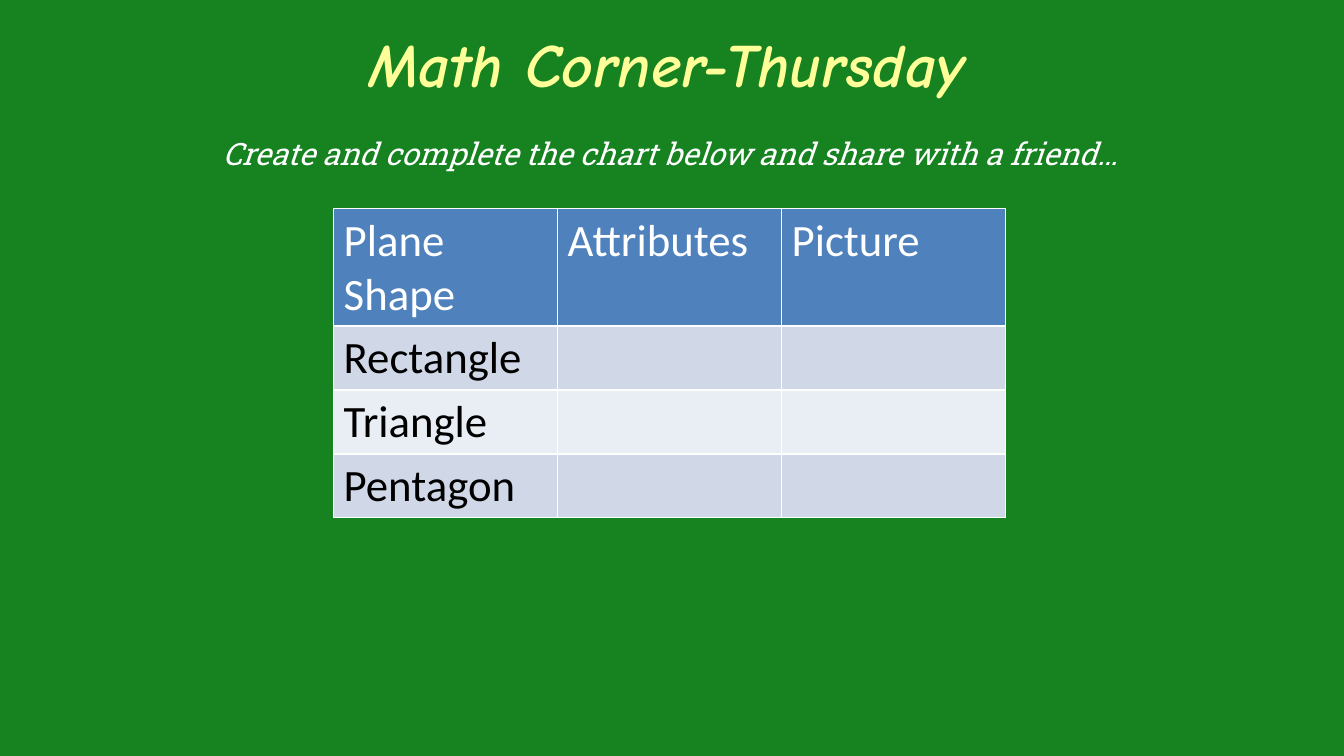
from dataclasses import dataclass

from lxml import etree
from pptx import Presentation
from pptx.dml.color import RGBColor
from pptx.enum.text import MSO_ANCHOR, PP_ALIGN
from pptx.oxml.ns import qn
from pptx.util import Pt

CENTER, LEFT = PP_ALIGN.CENTER, PP_ALIGN.LEFT
TOP, MIDDLE = MSO_ANCHOR.TOP, MSO_ANCHOR.MIDDLE

GREEN, YELLOW, WHITE, BLACK = "168220", "FFFF99", "FFFFFF", "000000"
HEADER_BLUE, BAND_DARK, BAND_LIGHT = "4F81BD", "D0D8E8", "E9EDF4"

COLUMN_WIDTH, HEADER_HEIGHT, ROW_HEIGHT = 160, 84, 45.7
TABLE_LEFT, TABLE_TOP = 238.3, 148.8
TABLE_ROWS = [
    ("Plane Shape", "Attributes", "Picture"),
    ("Rectangle", "", ""),
    ("Triangle", "", ""),
    ("Pentagon", "", ""),
]


@dataclass
class Heading:
    text: str
    left: float
    top: float
    width: float
    height: float
    font: str
    size: float
    color: str
    bold: bool
    anchor: MSO_ANCHOR


HEADINGS = [
    Heading("Math Corner-Thursday", 152.6, 0, 648, 90,
            "Comic Neue", 44, YELLOW, True, MIDDLE),
    Heading("Create and complete the chart below and share with a friend…",
            133.9, 92.9, 689.8, 55.4, "Roboto Slab", 22, WHITE, False, TOP),
]


def rgb(value: str) -> RGBColor:
    return RGBColor.from_string(value)


def write_text(text_frame, text: str, *, font: str, size: float, color: str,
               bold: bool = False, italic: bool = False,
               align: PP_ALIGN = LEFT) -> None:
    text_frame.word_wrap = True
    paragraph = text_frame.paragraphs[0]
    paragraph.alignment = align
    # The paragraph font also sizes cells that hold no text
    targets = [paragraph.font]
    if text:
        run = paragraph.add_run()
        run.text = text
        targets = [run.font]
    for target in targets:
        target.name, target.size = font, Pt(size)
        target.bold, target.italic = bold, italic
        target.color.rgb = rgb(color)


def add_heading(slide, heading: Heading) -> None:
    shape = slide.shapes.add_textbox(Pt(heading.left), Pt(heading.top),
                                     Pt(heading.width), Pt(heading.height))
    shape.text_frame.vertical_anchor = heading.anchor
    write_text(shape.text_frame, heading.text, font=heading.font,
               size=heading.size, color=heading.color, bold=heading.bold,
               italic=True, align=CENTER)


def set_borders(cell, color: str, width: float) -> None:
    properties = cell._tc.get_or_add_tcPr()
    for index, side in enumerate(("lnL", "lnR", "lnT", "lnB")):
        line = etree.Element(qn(f"a:{side}"), w=str(Pt(width)))
        fill = etree.SubElement(line, qn("a:solidFill"))
        etree.SubElement(fill, qn("a:srgbClr"), val=color)
        properties.insert(index, line)


def add_shape_table(slide) -> None:
    row_count, column_count = len(TABLE_ROWS), len(TABLE_ROWS[0])
    height = HEADER_HEIGHT + ROW_HEIGHT * (row_count - 1)
    table = slide.shapes.add_table(
        row_count, column_count, Pt(TABLE_LEFT), Pt(TABLE_TOP),
        Pt(COLUMN_WIDTH * column_count), Pt(height)).table
    table.first_row = table.horz_banding = False
    for column in table.columns:
        column.width = Pt(COLUMN_WIDTH)
    for row_index, texts in enumerate(TABLE_ROWS):
        is_header = row_index == 0
        table.rows[row_index].height = Pt(HEADER_HEIGHT if is_header else ROW_HEIGHT)
        band = BAND_DARK if row_index % 2 else BAND_LIGHT
        for column_index, text in enumerate(texts):
            cell = table.cell(row_index, column_index)
            cell.fill.solid()
            cell.fill.fore_color.rgb = rgb(HEADER_BLUE if is_header else band)
            set_borders(cell, WHITE, 1)
            write_text(cell.text_frame, text, font="Calibri", size=32,
                       color=WHITE if is_header else BLACK)


def main() -> None:
    presentation = Presentation()
    presentation.slide_width, presentation.slide_height = Pt(960), Pt(540)
    slide = presentation.slides.add_slide(presentation.slide_layouts[6])

    # Green board
    slide.background.fill.solid()
    slide.background.fill.fore_color.rgb = rgb(GREEN)

    # Title and instruction
    for heading in HEADINGS:
        add_heading(slide, heading)

    # Plane shapes to complete
    add_shape_table(slide)

    presentation.save("out.pptx")


if __name__ == "__main__":
    main()
